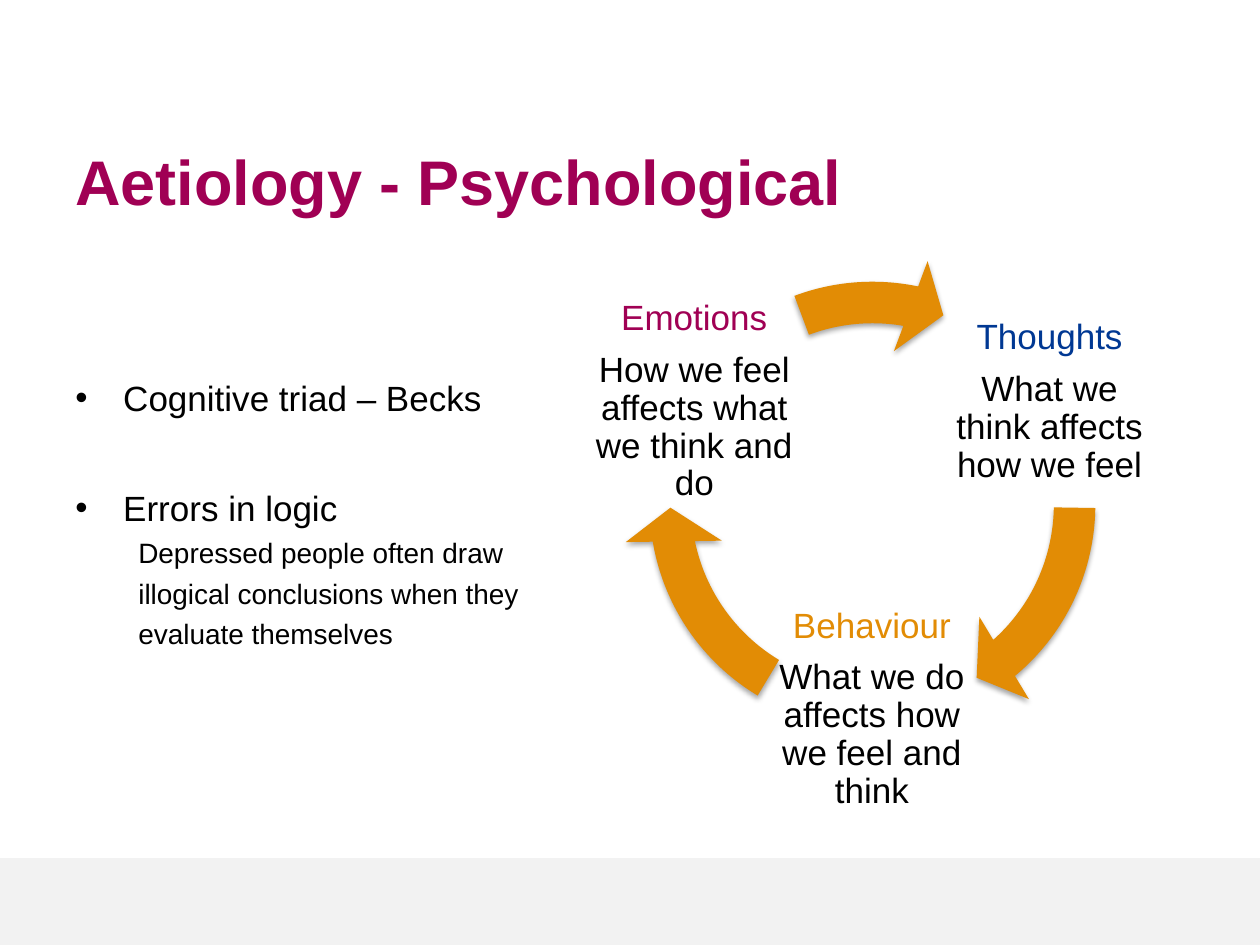
"""Build the slide on the psychological aetiology of depression."""
from lxml.etree import SubElement
from pptx import Presentation
from pptx.dml.color import RGBColor
from pptx.enum.shapes import MSO_SHAPE
from pptx.enum.text import MSO_ANCHOR, PP_ALIGN
from pptx.oxml.ns import qn
from pptx.util import Inches, Pt


def paint(color):
    return RGBColor.from_string(color)


def write(frame, text, size=20, color="000000", bold=False, align=PP_ALIGN.LEFT,
          line=1.0, before=0, after=0, left=0, bullet=False):
    para = frame.paragraphs[0]
    if para.runs:
        para = frame.add_paragraph()
    para.alignment = align
    para.line_spacing = line
    para.space_before, para.space_after = Pt(before), Pt(after)
    props = para._p.get_or_add_pPr()
    props.set("marL", str(Inches(left)))
    props.set("indent", str(Inches(-left if bullet else 0)))
    if bullet:
        SubElement(props, qn("a:buFont"), typeface="Arial")
        SubElement(props, qn("a:buChar"), char="•")
    run = para.add_run()
    run.text = text
    font = run.font
    font.name, font.size, font.bold = "Arial", Pt(size), bold
    font.color.rgb = paint(color)


deck = Presentation()
deck.slide_width, deck.slide_height = Inches(10), Inches(7.5)
slide = deck.slides.add_slide(deck.slide_layouts[6])
shapes = slide.shapes

band = shapes.add_shape(MSO_SHAPE.RECTANGLE, 0, Inches(6.81), Inches(10), Inches(0.69))
band.shadow.inherit = False
band.fill.solid()
band.fill.fore_color.rgb = paint("F2F2F2")
band.line.fill.background()

title = shapes.add_textbox(Inches(0.5), Inches(1.03), Inches(9), Inches(0.5)).text_frame
title.word_wrap = True
title.margin_top = Inches(0.1)
write(title, "Aetiology - Psychological", size=36, color="A00054", bold=True)

body = shapes.add_textbox(Inches(0.5), Inches(1.75), Inches(9), Inches(4.95)).text_frame
body.word_wrap = True
body.margin_top = Inches(1.24)
write(body, "Cognitive triad – Becks", left=0.38, bullet=True)
write(body, "Errors in logic", left=0.38, bullet=True, before=38.7)
for text in ("Depressed people often draw", "illogical conclusions when they",
             "evaluate themselves"):
    write(body, text, size=16, left=0.5, before=4)

triad = [
    ("Thoughts", "What we think affects how we feel", "003893", 7.49, 2.35, 29.618, 0.531),
    ("Behaviour", "What we do affects how we feel and think", "E28C05", 6.08, 4.79, 101.704, 72.616),
    ("Emotions", "How we feel affects what we think and do", "A00054", 4.67, 2.35, 168.548, 149.686),
]
for name, text, color, x, y, end, start in triad:
    frame = shapes.add_textbox(Inches(x), Inches(y), Inches(1.68), Inches(1.68)).text_frame
    frame.word_wrap = True
    frame.vertical_anchor = MSO_ANCHOR.MIDDLE
    frame.margin_left = frame.margin_right = Inches(0.03)
    frame.margin_top = frame.margin_bottom = Inches(0.03)
    write(frame, name, color=color, align=PP_ALIGN.CENTER, line=0.9, after=8)
    write(frame, text, align=PP_ALIGN.CENTER, line=0.9)

    arrow = shapes.add_shape(MSO_SHAPE.CIRCULAR_ARROW, Inches(4.94), Inches(2.02),
                             Inches(3.97), Inches(3.97))
    for i, value in enumerate((0.083, 5.766, end, start, 0.096)):
        arrow.adjustments[i] = value
    arrow.fill.solid()
    arrow.fill.fore_color.rgb = paint("E28C05")
    arrow.line.fill.background()
    arrow.shadow.inherit = False
    effect = arrow._element.spPr.find(qn("a:effectLst"))
    shade = SubElement(effect, qn("a:outerShdw"), blurRad=str(Pt(3.1)), dist=str(Pt(1.8)),
                       dir="5400000", rotWithShape="0")
    black = SubElement(shade, qn("a:srgbClr"), val="000000")
    SubElement(black, qn("a:alpha"), val="35000")

deck.save("out.pptx")
